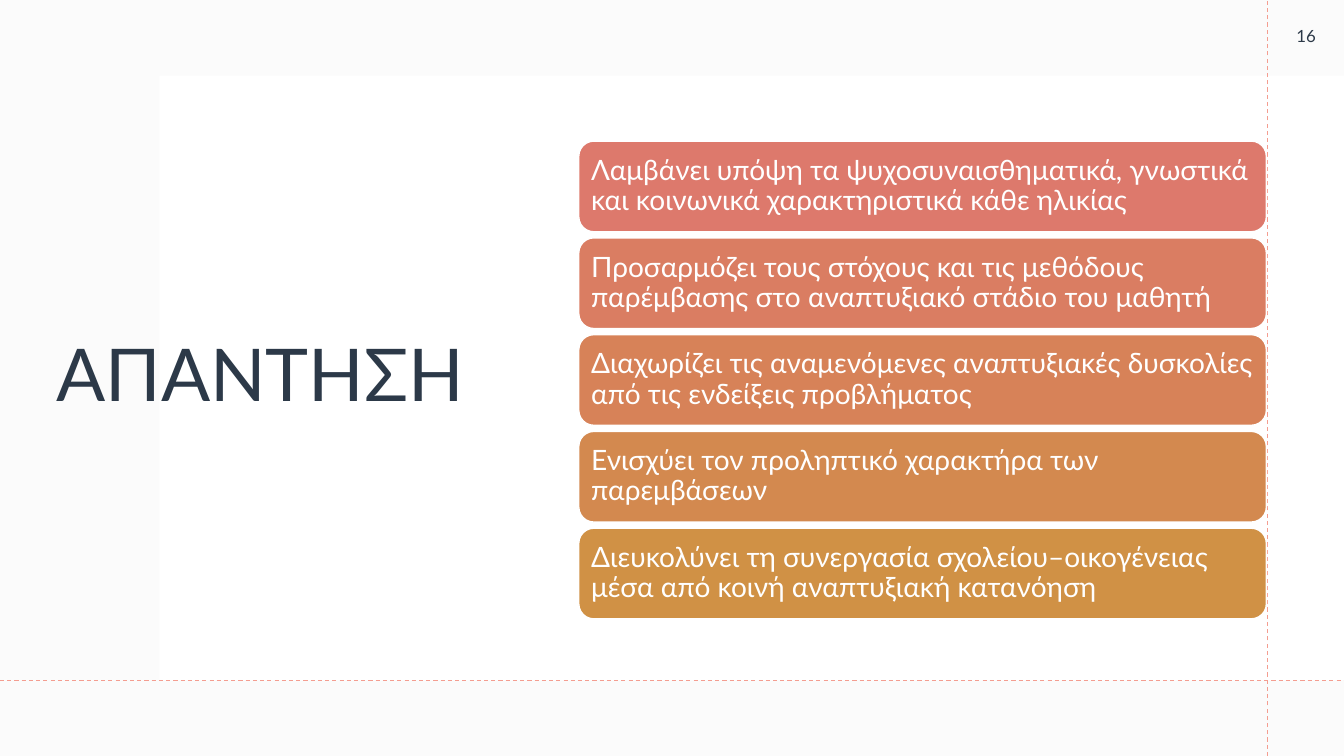
from lxml.etree import SubElement
from pptx import Presentation
from pptx.dml.color import RGBColor
from pptx.enum.dml import MSO_LINE
from pptx.enum.shapes import MSO_CONNECTOR, MSO_SHAPE
from pptx.enum.text import MSO_ANCHOR, PP_ALIGN
from pptx.oxml.ns import qn
from pptx.util import Inches, Pt

COLORS = {
    "white": "FFFFFF",
    "veil": "F4F4F4",
    "ink": "2C3948",
    "guide": "F49D90",
}
ANSWERS = [
    ("DD796C", "Λαμβάνει υπόψη τα ψυχοσυναισθηματικά, γνωστικά και κοινωνικά χαρακτηριστικά κάθε ηλικίας"),
    ("DA7D62", "Προσαρμόζει τους στόχους και τις μεθόδους παρέμβασης στο αναπτυξιακό στάδιο του μαθητή"),
    ("D78258", "Διαχωρίζει τις αναμενόμενες αναπτυξιακές δυσκολίες από τις ενδείξεις προβλήματος"),
    ("D3894F", "Ενισχύει τον προληπτικό χαρακτήρα των παρεμβάσεων"),
    ("D09145", "Διευκολύνει τη συνεργασία σχολείου–οικογένειας μέσα από κοινή αναπτυξιακή κατανόηση"),
]
WIDTH, HEIGHT = 13.33, 7.5


class SlideBuilder:
    """Draws styled elements on the current slide."""

    font = "Lato"

    def __init__(self, slide):
        self.slide = slide

    def color(self, name):
        return RGBColor.from_string(COLORS.get(name, name))

    def set_text(self, sp, text, size, color, align=PP_ALIGN.LEFT, spacing=None, inset=0.1):
        tf = sp.text_frame
        tf.word_wrap = True
        tf.vertical_anchor = MSO_ANCHOR.MIDDLE
        tf.margin_left = tf.margin_right = Inches(inset)
        p = tf.paragraphs[0]
        p.text = text
        p.alignment = align
        p.line_spacing = spacing
        p.font.name = self.font
        p.font.size = Pt(size)
        p.font.color.rgb = self.color(color)

    def label(self, box, text, size, **style):
        sp = self.slide.shapes.add_textbox(*map(Inches, box))
        self.set_text(sp, text, size, "ink", **style)

    def panel(self, box, fill, kind=MSO_SHAPE.RECTANGLE, opacity=None):
        sp = self.slide.shapes.add_shape(kind, *map(Inches, box))
        sp.shadow.inherit = False
        sp.fill.solid()
        sp.fill.fore_color.rgb = self.color(fill)
        sp.line.fill.background()
        if opacity is not None:
            clr = sp._element.spPr.find(qn("a:solidFill")).find(qn("a:srgbClr"))
            SubElement(clr, qn("a:alpha")).set("val", str(opacity * 1000))
        return sp

    def card(self, box, fill, text):
        sp = self.panel(box, fill, MSO_SHAPE.ROUNDED_RECTANGLE)
        sp.line.color.rgb = self.color("white")
        sp.line.width = Pt(1)
        self.set_text(sp, text, 20, "white", spacing=0.9, inset=0.08)

    def guide(self, *ends):
        cxn = self.slide.shapes.add_connector(MSO_CONNECTOR.STRAIGHT, *map(Inches, ends))
        cxn.line.color.rgb = self.color("guide")
        cxn.line.width = Pt(0.75)
        cxn.line.dash_style = MSO_LINE.DASH
        SubElement(cxn._element.spPr, qn("a:effectLst"))


def main():
    prs = Presentation()
    prs.slide_width, prs.slide_height = Inches(WIDTH), Inches(HEIGHT)
    s = SlideBuilder(prs.slides.add_slide(prs.slide_layouts[6]))

    s.panel((0, 0, WIDTH, HEIGHT), "white")
    s.panel((0, 0, WIDTH, HEIGHT), "veil", opacity=35)
    s.panel((1.58, 0.75, 11.75, 6), "white")
    s.label((0.46, 1.03, 4.89, 5.44), "ΑΠΑΝΤΗΣΗ", 52, spacing=0.9)
    s.label((12.58, -0.02, 0.75, 0.75), "16", 12, align=PP_ALIGN.CENTER)
    s.guide(12.57, HEIGHT, 12.57, 0)
    s.guide(0, 6.75, WIDTH, 6.75)
    for i, (fill, text) in enumerate(ANSWERS):
        s.card((5.74, 1.4 + 0.96 * i, 6.82, 0.9), fill, text)

    prs.save("out.pptx")


if __name__ == "__main__":
    main()
